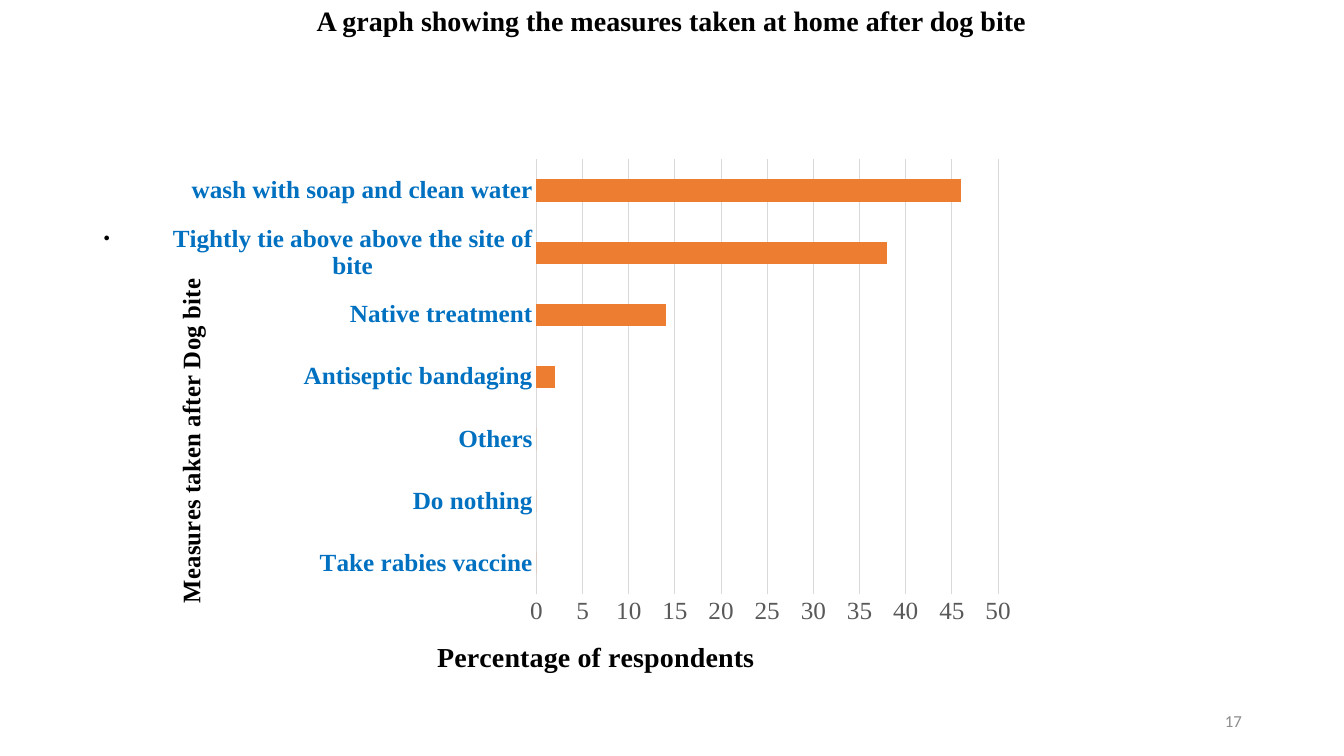
import pptx
import pptx.chart.data
import pptx.dml.color
import pptx.enum.chart
import pptx.enum.text
import pptx.oxml
import pptx.oxml.ns
import pptx.util

EMU_PER_PX = 914400 / 100.8
COLOURS = {
    "text": "000000",
    "category": "0070C0",
    "value": "595959",
    "grid": "D9D9D9",
    "bar": "ED7D31",
    "number": "8C8C8C",
}
SERIF = "Times New Roman"
SANS = "Calibri"
ALIGN = pptx.enum.text.PP_ALIGN
ANCHOR = pptx.enum.text.MSO_ANCHOR
MEASURES = [
    ("Take rabies vaccine", 0),
    ("Do nothing", 0),
    ("Others", 0),
    ("Antiseptic bandaging", 2),
    ("Native treatment", 14),
    ("Tightly tie above above the site of bite", 38),
    ("wash with soap and clean water", 46),
]


def px(length):
    return pptx.util.Emu(round(length * EMU_PER_PX))


def colour(name):
    return pptx.dml.color.RGBColor.from_string(COLOURS[name])


class SlideBuilder:
    def __init__(self, presentation):
        self.slide = presentation.slides.add_slide(presentation.slide_layouts[6])

    def style(self, font, size, name, face=SERIF, bold=False):
        font.size = pptx.util.Pt(size)
        font.name = face
        font.bold = bold
        font.color.rgb = colour(name)

    def text(self, box, words, size, name, face, bold=False,
             align=ALIGN.LEFT, anchor=ANCHOR.TOP, spacing=1.0, inset=10):
        shape = self.slide.shapes.add_textbox(*map(px, box))
        frame = shape.text_frame
        frame.word_wrap = True
        frame.vertical_anchor = anchor
        frame.margin_left = frame.margin_right = px(inset)
        frame.margin_top = frame.margin_bottom = px(inset // 2)
        paragraph = frame.paragraphs[0]
        paragraph.alignment = align
        paragraph.line_spacing = spacing
        run = paragraph.add_run()
        run.text = words
        self.style(run.font, size, name, face, bold)

    def layout(self, parent, index, target=None, **edges):
        tag = pptx.oxml.ns.qn("c:layout")
        for previous in parent.findall(tag):
            parent.remove(previous)
        settings = {"layoutTarget": target} if target else {}
        settings.update(xMode="edge", yMode="edge", **edges)
        items = "".join(f'<c:{key} val="{value}"/>' for key, value in settings.items())
        parent.insert(index, pptx.oxml.parse_xml(
            f'<c:layout {pptx.oxml.ns.nsdecls("c")}>'
            f"<c:manualLayout>{items}</c:manualLayout></c:layout>"))

    def axis_title(self, axis, words, size, x, y, rotation):
        title = axis.axis_title
        run = title.text_frame.paragraphs[0].add_run()
        run.text = words
        self.style(run.font, size, "text", bold=True)
        body = title.element.find(".//" + pptx.oxml.ns.qn("a:bodyPr"))
        body.set("rot", str(rotation * 60000))
        body.set("vert", "horz")
        self.layout(title.element, 1, x=x, y=y)

    def bar_chart(self, box, measures):
        data = pptx.chart.data.CategoryChartData()
        data.categories = [label for label, share in measures]
        data.add_series("Series 1", [share for label, share in measures])
        kind = pptx.enum.chart.XL_CHART_TYPE.BAR_CLUSTERED
        chart = self.slide.shapes.add_chart(kind, *map(px, box), data).chart
        chart.has_title = False
        chart.has_legend = False
        self.style(chart.font, 10, "text", SANS)
        plot = chart.plots[0]
        plot.gap_width = 182
        plot.vary_by_categories = False
        fill = plot.series[0].format.fill
        fill.solid()
        fill.fore_color.rgb = colour("bar")

        categories, values = chart.category_axis, chart.value_axis
        for axis in (categories, values):
            axis.major_tick_mark = pptx.enum.chart.XL_TICK_MARK.NONE
            axis.minor_tick_mark = pptx.enum.chart.XL_TICK_MARK.NONE
        self.style(categories.tick_labels.font, 18, "category", bold=True)
        self.style(values.tick_labels.font, 18, "value")
        values.minimum_scale, values.maximum_scale, values.major_unit = 0, 50, 5
        values.tick_labels.number_format = "0"
        values.tick_labels.number_format_is_linked = False
        values.format.line.fill.background()
        values.has_major_gridlines = True
        for line in (categories.format.line, values.major_gridlines.format.line):
            line.color.rgb = colour("grid")
            line.width = pptx.util.Pt(0.75)

        self.axis_title(categories, "Measures taken after Dog bite", 18, 0.01, 0.33, -90)
        self.axis_title(values, "Percentage of respondents", 20, 0.31, 0.94, 0)
        plot_area = chart.element.find(".//" + pptx.oxml.ns.qn("c:plotArea"))
        self.layout(plot_area, 0, "inner", x=0.43, y=0.12, w=0.53, h=0.75)


def main():
    presentation = pptx.Presentation()
    presentation.slide_width, presentation.slide_height = px(1344), px(756)
    builder = SlideBuilder(presentation)
    builder.text((92, 7, 1159, 62), "A graph showing the measures taken at home after dog bite",
                 20, "text", SERIF, bold=True, align=ALIGN.CENTER, spacing=0.9, inset=0)
    builder.text((92, 202, 1159, 480), ".", 28, "text", SANS, spacing=0.9)
    builder.text((950, 701, 302, 40), "17", 12, "number", SANS,
                 align=ALIGN.RIGHT, anchor=ANCHOR.MIDDLE)
    builder.bar_chart((162, 90, 871, 592), MEASURES)
    presentation.save("out.pptx")


if __name__ == "__main__":
    main()
